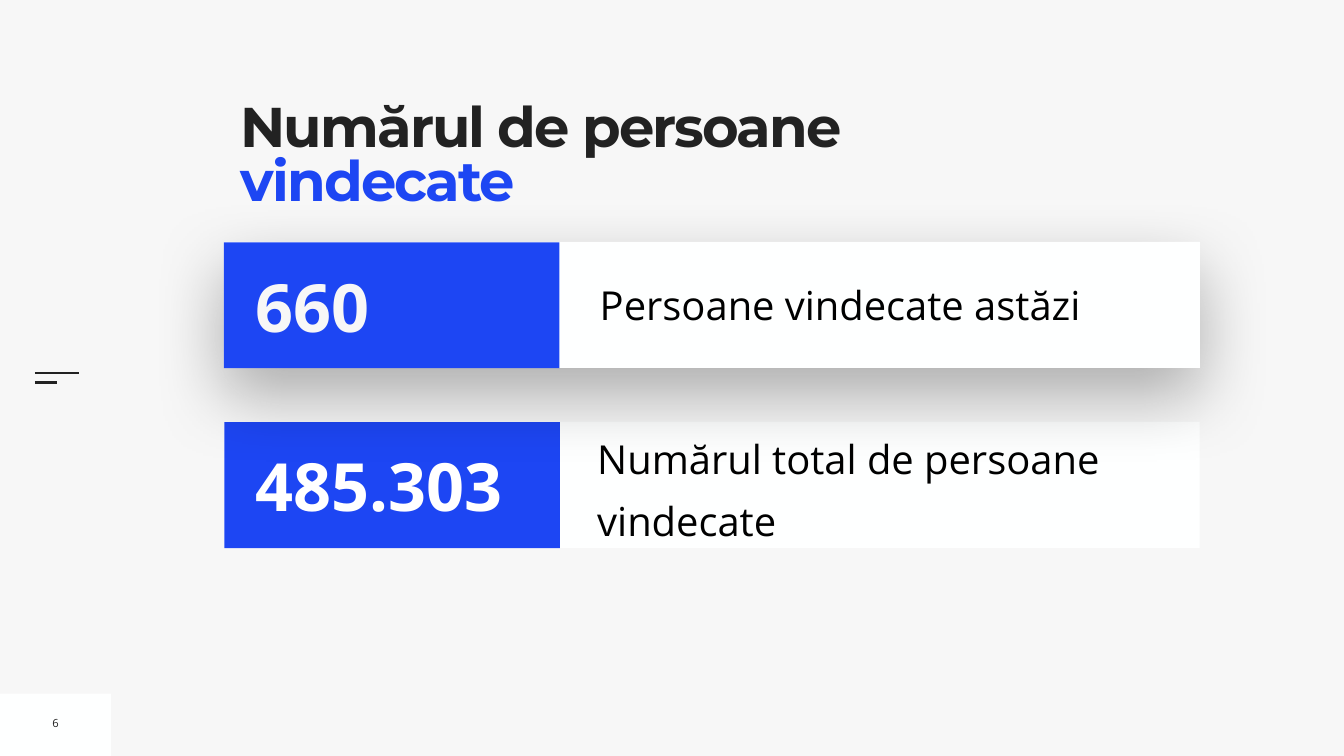
from lxml import etree
from pptx import Presentation
from pptx.dml.color import RGBColor
from pptx.enum.shapes import MSO_CONNECTOR, MSO_SHAPE
from pptx.enum.text import MSO_ANCHOR, PP_ALIGN
from pptx.oxml import parse_xml
from pptx.oxml.ns import nsdecls, qn
from pptx.util import Pt

BACKGROUND = RGBColor(0xF7, 0xF7, 0xF7)
PANEL = RGBColor(0xFE, 0xFF, 0xFF)
INK = RGBColor(0x22, 0x22, 0x22)
BLUE = RGBColor(0x1D, 0x46, 0xF3)
WHITE = RGBColor(0xFF, 0xFF, 0xFF)
BLACK = RGBColor(0, 0, 0)

CARD_HEIGHT = 180
FIGURE_WIDTH = 479.5


def add_panel(slide, left, top, width, height, color):
    panel = slide.shapes.add_shape(
        MSO_SHAPE.RECTANGLE, Pt(left), Pt(top), Pt(width), Pt(height))
    panel.shadow.inherit = False
    panel.fill.solid()
    panel.fill.fore_color.rgb = color
    panel.line.fill.background()
    return panel


def add_text(slide, left, top, width, height, runs, size, font="Open Sans",
             bold=False, inset=7.2, anchor=MSO_ANCHOR.MIDDLE, wrap=True):
    """Add one paragraph made of (wording, colour) runs and return it."""
    box = slide.shapes.add_textbox(Pt(left), Pt(top), Pt(width), Pt(height))
    frame = box.text_frame
    frame.word_wrap = wrap
    frame.vertical_anchor = anchor
    frame.margin_left = frame.margin_right = Pt(inset)
    frame.margin_top = frame.margin_bottom = Pt(inset)
    paragraph = frame.paragraphs[0]
    paragraph.font.name = font
    paragraph.font.size = Pt(size)
    paragraph.font.bold = bold
    for wording, color in runs:
        run = paragraph.add_run()
        run.text = wording
        run.font.color.rgb = color
    return paragraph


def add_soft_shadow(panel):
    effects = panel._element.spPr.find(qn("a:effectLst"))
    effects.append(parse_xml(
        f'<a:outerShdw {nsdecls("a")} blurRad="{Pt(100)}" dist="{Pt(40)}" '
        'dir="5400000" algn="ctr" rotWithShape="0">'
        '<a:srgbClr val="000000"><a:alpha val="30000"/></a:srgbClr>'
        '</a:outerShdw>'))


def add_menu_mark(slide, left, top):
    for offset, length in ((0, 63.5), (13, 31.5)):
        bar = slide.shapes.add_connector(
            MSO_CONNECTOR.STRAIGHT, Pt(left), Pt(top + offset),
            Pt(left + length), Pt(top + offset))
        bar.line.color.rgb = INK
        bar.line.width = Pt(3)
        etree.SubElement(bar._element.spPr, qn("a:effectLst"))


def add_page_number(slide, left, top, width, height, number):
    add_panel(slide, left, top, width, height, PANEL)
    paragraph = add_text(slide, left + 67, top + 23.5, 24.5, 36.7,
                         [(number, INK)], 16, wrap=False)
    paragraph.alignment = PP_ALIGN.CENTER


def add_title(slide, left, top, width, height):
    add_panel(slide, left, top, width, height, BACKGROUND)
    title = add_text(slide, left, top, width, height,
                     [("Numărul de persoane ", INK), ("vindecate", BLUE)], 80,
                     font="Montserrat", bold=True, inset=0,
                     anchor=MSO_ANCHOR.TOP)
    title.line_spacing = 0.8
    for run in title.runs:
        run._r.get_or_add_rPr().set("spc", "-270")


def add_card(slide, left, top, width, figure, figure_color):
    """Draw a white card with its figure on blue and return the card."""
    card = add_panel(slide, left, top, width, CARD_HEIGHT, PANEL)
    add_panel(slide, left, top + 0.5, FIGURE_WIDTH, CARD_HEIGHT, BLUE)
    add_text(slide, left + 38, top + 26, 434, 129.6,
             [(figure, figure_color)], 95, bold=True)
    return card


def add_total_card(slide, left, top, width):
    add_card(slide, left, top, width, "485.303", WHITE)
    label = add_text(slide, left + 532.8, top + 1.4, 860.4, 170,
                     [("Numărul total de persoane vindecate", BLACK)], 57,
                     inset=0)
    label.line_spacing = 1.3
    label.space_before = Pt(20)


def add_today_card(slide, left, top, width):
    card = add_card(slide, left, top, width, "660", BACKGROUND)
    add_soft_shadow(card)
    add_text(slide, left + 530, top + 48.2, 846.7, 83.5,
             [("Persoane vindecate astăzi", BLACK)], 57)


def main():
    deck = Presentation()
    deck.slide_width, deck.slide_height = Pt(1920), Pt(1080)
    slide = deck.slides.add_slide(deck.slide_layouts[6])
    slide.background.fill.solid()
    slide.background.fill.fore_color.rgb = BACKGROUND

    add_page_number(slide, 0, 991, 158.5, 89, "6")
    add_menu_mark(slide, 50, 533.5)
    add_title(slide, 343.5, 149, 936.7, 196.6)
    add_total_card(slide, 320.4, 602.6, 1393.2)
    add_today_card(slide, 319.7, 345.6, 1394.6)
    deck.save("out.pptx")


if __name__ == "__main__":
    main()
